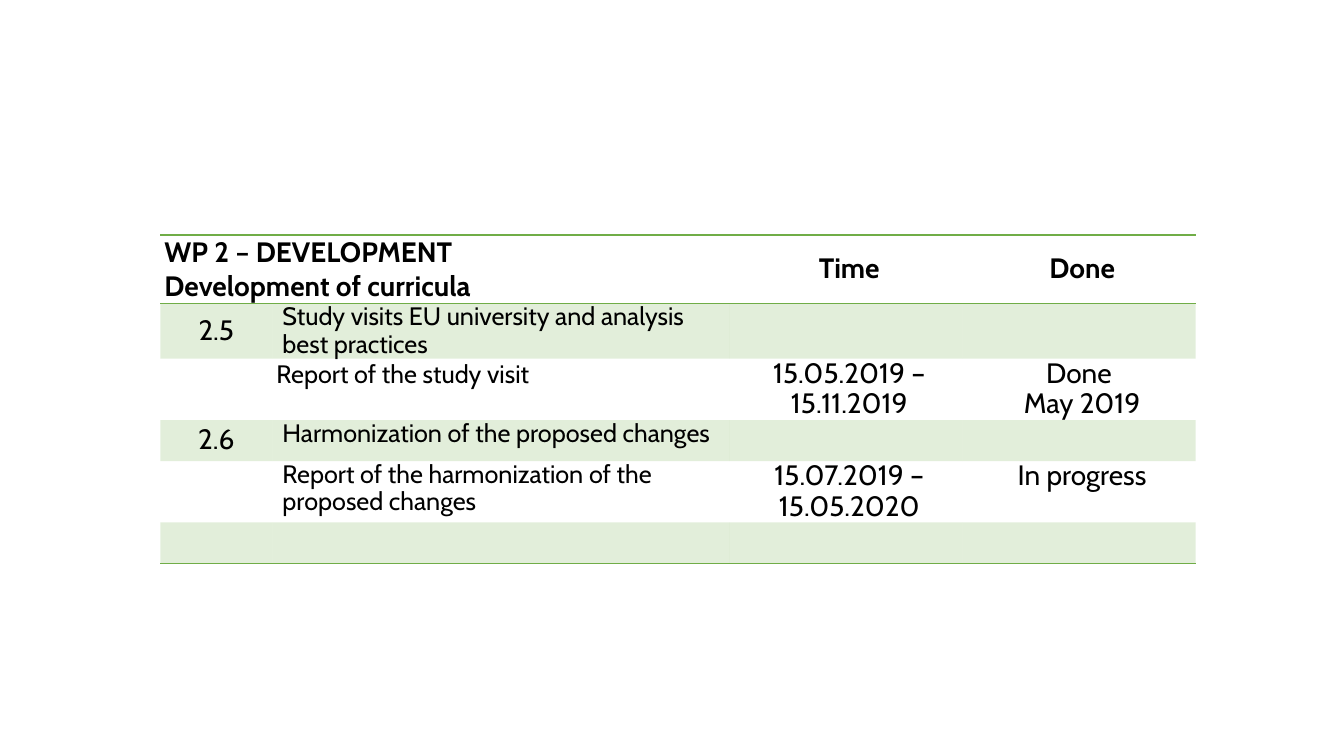
"""Build the work package 2 progress table slide."""
from lxml import etree
from pptx import Presentation
from pptx import util as u
from pptx.dml.color import RGBColor
from pptx.enum import text
from pptx.oxml import ns

GREEN = RGBColor(0x70, 0xAD, 0x47)
BLACK = RGBColor(0, 0, 0)
PLAIN = "{2D5ABB26-0587-4C30-8999-92F81FD0307C}"
MID = text.MSO_ANCHOR.MIDDLE
MIDDLE = text.PP_ALIGN.CENTER


def add(node, tag, **attrs):
    child = etree.SubElement(node, ns.qn(tag))
    for key, val in attrs.items():
        child.set(key, str(val))
    return child


def write(cell, words, size=20, bold=False, align=None, inset=True, space=0.9, font="Cabin"):
    frame = cell.text_frame
    for i, line in enumerate(words):
        para = frame.add_paragraph() if i else frame.paragraphs[0]
        para.text = line
        para.alignment = align
        para.line_spacing = space
        if inset:
            props = para._p.get_or_add_pPr()
            props.set("marL", str(u.Pt(4.3)))
            props.set("indent", "0")
            add(add(props, "a:tabLst"), "a:tab", pos=u.Pt(11.5), algn="l")
        for run in para.runs:
            run.font.name = font
            run.font.size = u.Pt(size)
            run.font.bold = bold
            run.font.color.rgb = BLACK


class Deck:
    """Hold the style and the current slide."""

    def __init__(self, wide, high):
        self.file = Presentation()
        self.file.slide_width = u.Pt(wide)
        self.file.slide_height = u.Pt(high)
        self.slide = self.file.slides.add_slide(self.file.slide_layouts[6])

    def table(self, left, top, cols, rows, high):
        shape = self.slide.shapes.add_table(
            rows, len(cols), u.Pt(left), u.Pt(top), u.Pt(sum(cols)), u.Pt(rows * high))
        grid = shape.table
        grid.first_row = grid.horz_banding = False
        grid._tbl.tblPr.find(ns.qn("a:tableStyleId")).text = PLAIN
        for col, wide in zip(grid.columns, cols):
            col.width = u.Pt(wide)
        for row in grid.rows:
            row.height = u.Pt(high)
        return grid

    def rule(self, cell, side):
        line = add(cell._tc.get_or_add_tcPr(), f"a:ln{side}", w=u.Pt(1))
        add(add(line, "a:solidFill"), "a:srgbClr", val=GREEN)

    def paint(self, cell, band):
        if not band:
            cell.fill.background()
            return
        cell.fill.solid()
        cell.fill.fore_color.rgb = GREEN
        tint = cell._tc.tcPr.find(ns.qn("a:solidFill"))[0]
        add(tint, "a:alpha", val=20000)

    def style(self, cell, sides, band):
        cell.margin_left = cell.margin_right = u.Pt(3)
        cell.margin_top = cell.margin_bottom = 0
        for side in sides:
            self.rule(cell, side)
        self.paint(cell, band)


def main():
    deck = Deck(960, 540)
    grid = deck.table(114.5, 167.8, [80, 326.9, 166.3, 166.3], 6, 29.2)
    for r, row in enumerate(grid.rows):
        for cell in row.cells:
            deck.style(cell, {0: "TB", 5: "B"}.get(r, ""), r % 2)

    grid.cell(0, 0).merge(grid.cell(0, 1))
    head = grid.cell(0, 0)
    write(head, ["WP 2 – DEVELOPMENT\nDevelopment of curricula"],
          bold=True, inset=False, space=None)
    head.vertical_anchor = MID
    for c, name in enumerate(["Time", "Done"], 2):
        cell = grid.cell(0, c)
        write(cell, [name], bold=True, align=MIDDLE)
        cell.vertical_anchor = MID

    tasks = [("2.5", "Study visits EU university and analysis best practices"),
             ("2.6", "Harmonization of the proposed changes")]
    for r, (code, task) in zip((1, 3), tasks):
        cell = grid.cell(r, 0)
        write(cell, [code], align=MIDDLE, inset=False)
        cell.vertical_anchor = MID
        write(grid.cell(r, 1), [task], size=18)

    write(grid.cell(2, 1), ["Report of the study visit"], size=18, inset=False, space=None)
    write(grid.cell(4, 1), ["Report of the harmonization of the proposed changes"], size=18)
    states = [("15.05.2019 – 15.11.2019", ["Done ", "May 2019"]),
              ("15.07.2019 – 15.05.2020", ["In progress"])]
    for r, (dates, state) in zip((2, 4), states):
        write(grid.cell(r, 2), [dates], align=MIDDLE)
        write(grid.cell(r, 3), state, align=MIDDLE)

    deck.file.save("out.pptx")


if __name__ == "__main__":
    main()
